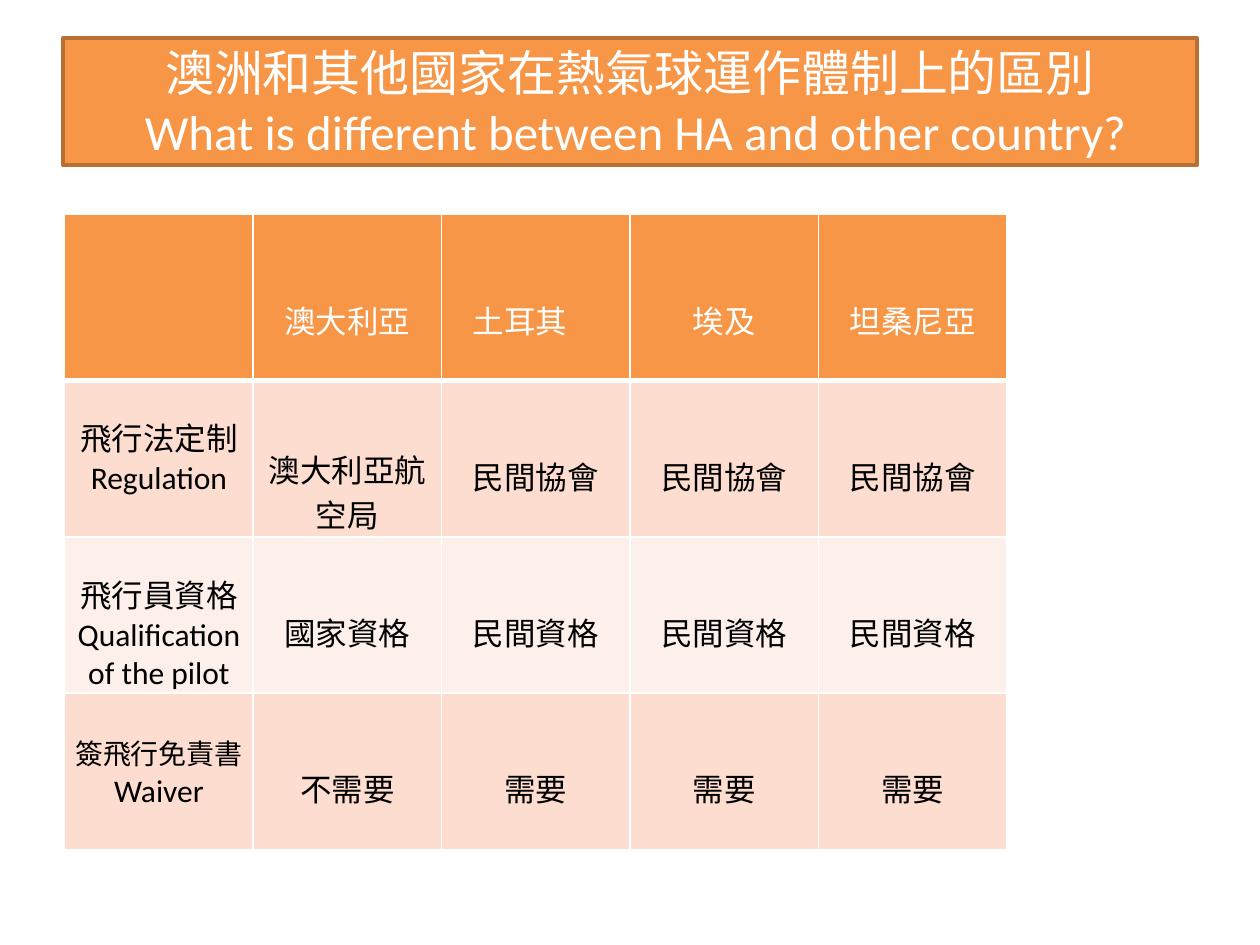
from copy import deepcopy
from dataclasses import dataclass

from lxml.etree import SubElement
from pptx import Presentation
from pptx.dml.color import RGBColor
from pptx.enum.text import MSO_ANCHOR, MSO_AUTO_SIZE, PP_ALIGN
from pptx.oxml.ns import qn
from pptx.util import Pt

ORANGE = RGBColor(0xF7, 0x96, 0x46)
BROWN = RGBColor(0xB7, 0x6F, 0x34)
PEACH = RGBColor(0xFC, 0xDD, 0xCF)
CREAM = RGBColor(0xFD, 0xEF, 0xE9)
WHITE = RGBColor(0xFF, 0xFF, 0xFF)
BLACK = RGBColor(0, 0, 0)

FONT = "Calibri"
TEXT_SIZE = 18
SMALL_SIZE = 16
COLUMN_WIDTH = 107.7
CELL_MARGIN = 0.72
BOTTOM_GAP = 22  # one text line kept free below short entries
FULL_CELLS = ("澳大利亞航空局", "飛行員資格\vQualification of the pilot")
SMALL_LABEL = "簽飛行免責書"


@dataclass
class TableRow:
    height: float
    fill: RGBColor
    color: RGBColor
    border_below: float
    texts: list[str]


ROWS = [
    TableRow(94.9, ORANGE, WHITE, 3, ["", "澳大利亞", "土耳其\u3000".replace("\u3000", "　"), "埃及", "坦桑尼亞"]),
    TableRow(89.3, PEACH, BLACK, 1, ["飛行法定制\vRegulation", "澳大利亞航空局"] + ["民間協會"] * 3),
    TableRow(89.3, CREAM, BLACK, 1, ["飛行員資格\vQualification of the pilot", "國家資格"] + ["民間資格"] * 3),
    TableRow(89.3, PEACH, BLACK, 1, [SMALL_LABEL + "\vWaiver", "不需要"] + ["需要"] * 3),
]


def format_text(paragraph, size: float, color: RGBColor) -> None:
    """Center a paragraph and give its runs and line breaks one font."""
    paragraph.alignment = PP_ALIGN.CENTER
    for span in paragraph.runs:
        span.font.name = FONT
        span.font.size = Pt(SMALL_SIZE if span.text == SMALL_LABEL else size)
        span.font.color.rgb = color
    for line_break in paragraph._p.findall(qn("a:br")):
        line_break.append(deepcopy(paragraph.runs[0]._r.rPr))


def add_border(cell, side: str, width: float) -> None:
    line = SubElement(cell._tc.get_or_add_tcPr(), qn(f"a:ln{side}"), w=str(Pt(width)))
    SubElement(SubElement(line, qn("a:solidFill")), qn("a:srgbClr"), val=str(WHITE))


def fill_cell(cell, text: str, row: TableRow, border_above: float) -> None:
    cell.text_frame.text = text
    format_text(cell.text_frame.paragraphs[0], TEXT_SIZE, row.color)
    cell.vertical_anchor = MSO_ANCHOR.BOTTOM
    cell.margin_left = cell.margin_right = cell.margin_top = Pt(CELL_MARGIN)
    cell.margin_bottom = Pt(0 if text in FULL_CELLS else BOTTOM_GAP)
    borders = {"L": 1, "R": 1, "T": border_above, "B": row.border_below}
    for side, width in borders.items():
        add_border(cell, side, width)
    cell.fill.solid()
    cell.fill.fore_color.rgb = row.fill


def set_title(page) -> None:
    title = page.shapes.title
    title.left, title.top, title.width, title.height = Pt(36), Pt(21.6), Pt(648), Pt(72.8)
    title.fill.solid()
    title.fill.fore_color.rgb = ORANGE
    title.line.color.rgb = BROWN
    title.line.width = Pt(2)
    frame = title.text_frame
    frame.text = "澳洲和其他國家在熱氣球運作體制上的區別\v What is different between HA and other country?"
    frame.word_wrap = True
    frame.auto_size = MSO_AUTO_SIZE.NONE
    frame.vertical_anchor = MSO_ANCHOR.MIDDLE
    format_text(frame.paragraphs[0], 28, WHITE)


def add_comparison(page) -> None:
    column_count = len(ROWS[0].texts)
    table = page.shapes.add_table(
        len(ROWS), column_count, Pt(37), Pt(122.6),
        Pt(COLUMN_WIDTH * column_count), Pt(sum(row.height for row in ROWS)),
    ).table
    table.first_row = table.horz_banding = False
    for column in table.columns:
        column.width = Pt(COLUMN_WIDTH)
    border_above = 1
    for index, row in enumerate(ROWS):
        table.rows[index].height = Pt(row.height)
        for cell, text in zip(table.rows[index].cells, row.texts):
            fill_cell(cell, text, row, border_above)
        border_above = row.border_below


def main() -> None:
    deck = Presentation()
    deck.slide_width, deck.slide_height = Pt(720), Pt(540)
    page = deck.slides.add_slide(deck.slide_layouts[5])
    set_title(page)
    add_comparison(page)
    deck.save("out.pptx")


if __name__ == "__main__":
    main()
